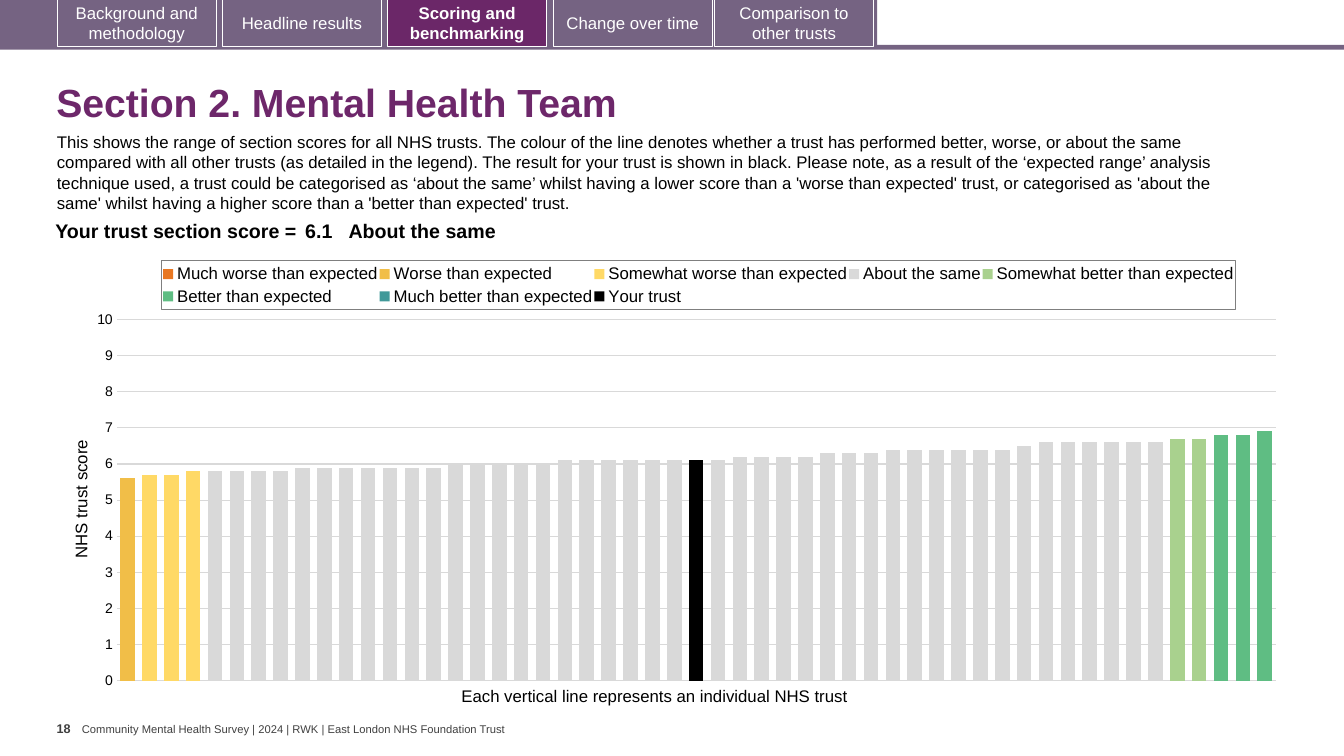
import copy

import pptx
import pptx.chart.data
import pptx.dml.color
import pptx.enum.chart
import pptx.enum.shapes
import pptx.enum.text
import pptx.oxml
import pptx.oxml.ns
import pptx.util

Pt = pptx.util.Pt
RGB = pptx.dml.color.RGBColor
qn = pptx.oxml.ns.qn
ALIGN = pptx.enum.text.PP_ALIGN
ANCHOR = pptx.enum.text.MSO_ANCHOR
RECT = pptx.enum.shapes.MSO_SHAPE.RECTANGLE

WHITE = RGB(0xFF, 0xFF, 0xFF)
BLACK = RGB(0, 0, 0)
MAUVE = RGB(0x75, 0x63, 0x82)
PLUM = RGB(0x6B, 0x27, 0x68)
PURPLE = RGB(0x6D, 0x27, 0x6A)
SLATE = RGB(0x40, 0x40, 0x40)
GRID = RGB(0xD9, 0xD9, 0xD9)

TABS = [
    (41, "Background and methodology"),
    (159, "Headline results"),
    (277, "Scoring and benchmarking"),
    (395.25, "Change over time"),
    (510.5, "Comparison to other trusts"),
]
ACTIVE = "Scoring and benchmarking"

INTRO = (
    "This shows the range of section scores for all NHS trusts. The colour of the line "
    "denotes whether a trust has performed better, worse, or about the same compared with "
    "all other trusts (as detailed in the legend). The result for your trust is shown in "
    "black. Please note, as a result of the ‘expected range’ analysis technique used, a "
    "trust could be categorised as ‘about the same’ whilst having a lower score than a "
    "'worse than expected' trust, or categorised as 'about the same' whilst having a "
    "higher score than a 'better than expected' trust."
)

TRUSTS = 53
SAME = ([5.8] * 4 + [5.9] * 7 + [6.0] * 5 + [6.1] * 8 + [6.2] * 4
        + [6.3] * 3 + [6.4] * 6 + [6.5] + [6.6] * 6)
# Band name, colour, position of its first trust, scores
BANDS = [
    ("Much worse than expected", RGB(0xE8, 0x77, 0x22), 0, []),
    ("Worse than expected", RGB(0xF1, 0xBE, 0x48), 0, [5.6]),
    ("Somewhat worse than expected", RGB(0xFF, 0xD9, 0x66), 1, [5.7, 5.7, 5.8]),
    ("About the same", GRID, 4, SAME),
    ("Somewhat better than expected", RGB(0xA9, 0xD1, 0x8E), 48, [6.7, 6.7]),
    ("Better than expected", RGB(0x5F, 0xBD, 0x83), 50, [6.8, 6.8, 6.9]),
    ("Much better than expected", RGB(0x41, 0x99, 0x99), 0, []),
    ("Your trust", BLACK, 26, [6.1]),
]


def style(font, size, color=BLACK, bold=False):
    font.name = "Arial"
    font.size = Pt(size)
    font.bold = bold
    font.color.rgb = color


def add_text(slide, box, text, size, color=BLACK, bold=False, wrap=False, side=7.2):
    frame = slide.shapes.add_textbox(*map(Pt, box)).text_frame
    frame.word_wrap = wrap
    frame.margin_left = frame.margin_right = Pt(side)
    frame.text = text
    style(frame.paragraphs[0].font, size, color, bold)


def add_block(slide, box, fill):
    block = slide.shapes.add_shape(RECT, *map(Pt, box))
    block.shadow.inherit = False
    block.fill.solid()
    block.fill.fore_color.rgb = fill
    block.line.fill.background()
    return block


def add_tabs(slide, box):
    left, top, width, height = box
    add_block(slide, (left, top + height - 3.5, width, 3.5), MAUVE)
    add_block(slide, (left, top, 626.5, height - 1.5), MAUVE)
    for start, label in TABS:
        active = label == ACTIVE
        tab = add_block(slide, (left + start, top - 0.75, 113.5, 34), PLUM if active else MAUVE)
        tab.line.color.rgb = WHITE
        tab.line.width = Pt(0.75)
        frame = tab.text_frame
        frame.word_wrap = True
        frame.vertical_anchor = ANCHOR.MIDDLE
        frame.text = label
        frame.paragraphs[0].alignment = ALIGN.CENTER
        style(frame.paragraphs[0].font, 12, WHITE, active)


def add_title(slide, box):
    title = slide.shapes.title
    title.left, title.top, title.width, title.height = map(Pt, box)
    frame = title.text_frame
    frame.text = "Section 2. Mental Health Team"
    frame.auto_size = pptx.enum.text.MSO_AUTO_SIZE.NONE
    frame.vertical_anchor = ANCHOR.MIDDLE
    line = frame.paragraphs[0]
    line.alignment = ALIGN.LEFT
    line.line_spacing = 0.9
    style(line.font, 28, PURPLE, True)


def add_score(slide, box):
    table = slide.shapes.add_table(1, 3, *map(Pt, box)).table
    table.first_row = table.horz_banding = False
    cells = [
        (189.5, "Your trust section score =", ALIGN.RIGHT, 3),
        (34, "6.1", ALIGN.LEFT, 3),
        (box[2] - 223.5, "About the same", ALIGN.LEFT, 0),
    ]
    for index, (width, text, align, side) in enumerate(cells):
        table.columns[index].width = Pt(width)
        cell = table.cell(0, index)
        cell.fill.background()
        cell.margin_left = cell.margin_right = Pt(side)
        cell.margin_top = cell.margin_bottom = Pt(3)
        cell.text = text
        line = cell.text_frame.paragraphs[0]
        line.alignment = align
        style(line.font, 14, bold=True)


def parse_xml(body):
    return pptx.oxml.parse_xml(body.replace(">", " " + pptx.oxml.ns.nsdecls("c", "a") + ">", 1))


def set_place(part, box, inner=False, **place):
    """Give a chart part a fixed place, in points within the chart's box."""
    for old in part.findall(qn("c:layout")):
        part.remove(old)
    body = '<c:layoutTarget val="inner"/>' if inner else ""
    body += "".join(f'<c:{key}Mode val="edge"/>' for key in place if key in "xy")
    for key, value in place.items():
        body += f'<c:{key} val="{value / box[2 if key in "xw" else 3]:.4f}"/>'
    layout = parse_xml(f"<c:layout><c:manualLayout>{body}</c:manualLayout></c:layout>")
    after = part.find(qn("c:overlay"))
    (part[0] if after is None else after).addprevious(layout)


def add_legend(chart, box):
    chart.has_legend = True
    legend = chart.legend
    legend.position = pptx.enum.chart.XL_LEGEND_POSITION.TOP
    legend.include_in_layout = False
    style(legend.font, 12)
    part = legend._element
    set_place(part, box, x=67, y=8.5, w=767.5, h=35)
    part.find(qn("c:overlay")).addnext(parse_xml(
        '<c:spPr><a:ln w="9525"><a:solidFill><a:srgbClr val="7F7F7F"/>'
        "</a:solidFill></a:ln></c:spPr>"))


def split_axis(area):
    """Move the last series to a second plot on an unlabelled right axis."""
    first = area.find(qn("c:barChart"))
    second = copy.deepcopy(first)
    first.remove(first.findall(qn("c:ser"))[-1])
    for series in second.findall(qn("c:ser"))[:-1]:
        second.remove(series)
    for link, number in zip(second.findall(qn("c:axId")), ("501", "502")):
        link.set("val", number)
    first.addnext(second)
    common = '<c:crossAx val="{}"/><c:crosses val="{}"/>'
    scale = '<c:scaling><c:orientation val="minMax"/>{}</c:scaling><c:delete val="{}"/>'
    right = (
        '<c:valAx><c:axId val="502"/>'
        + scale.format('<c:max val="10"/><c:min val="0"/>', 0)
        + '<c:axPos val="r"/><c:majorTickMark val="out"/><c:minorTickMark val="none"/>'
        '<c:tickLblPos val="none"/><c:spPr><a:ln><a:noFill/></a:ln></c:spPr>'
        + common.format(501, "max") + "</c:valAx>")
    base = ('<c:catAx><c:axId val="501"/>' + scale.format("", 1) + '<c:axPos val="b"/>'
            + common.format(502, "autoZero") + "</c:catAx>")
    last = area.find(qn("c:valAx"))
    last.addnext(parse_xml(base))
    last.addnext(parse_xml(right))


def add_chart(slide, box):
    data = pptx.chart.data.CategoryChartData()
    data.categories = [str(number) for number in range(1, TRUSTS + 1)]
    for name, _, start, scores in BANDS:
        rest = TRUSTS - start - len(scores)
        data.add_series(name, [None] * start + scores + [None] * rest)
    kind = pptx.enum.chart.XL_CHART_TYPE.COLUMN_CLUSTERED
    chart = slide.shapes.add_chart(kind, *map(Pt, box), data).chart
    chart.has_title = False
    style(chart.font, 10)
    plot = chart.plots[0]
    plot.gap_width = 50
    plot.overlap = 100
    plot.vary_by_categories = False
    for series, band in zip(plot.series, BANDS):
        series.format.fill.solid()
        series.format.fill.fore_color.rgb = band[1]
    chart.category_axis.visible = False
    axis = chart.value_axis
    axis.minimum_scale, axis.maximum_scale, axis.major_unit = 0, 10, 1
    axis.major_tick_mark = pptx.enum.chart.XL_TICK_MARK.NONE
    axis.format.line.fill.background()
    axis.major_gridlines.format.line.color.rgb = GRID
    axis.major_gridlines.format.line.width = Pt(0.75)
    style(axis.tick_labels.font, 10)
    label = axis.axis_title
    label.text_frame.text = "NHS trust score"
    style(label.text_frame.paragraphs[0].font, 12)
    set_place(label._element, box, x=0, y=134.25)
    add_legend(chart, box)
    area = chart._chartSpace.chart.plotArea
    set_place(area, box, inner=True, x=35, y=50.5, w=828, h=258)
    split_axis(area)


def add_foot(slide, box):
    left, top, width, height = box
    add_text(slide, (left, top, 18, height), "18", 9, SLATE, True, side=0)
    add_text(slide, (left + 18, top + 0.75, width - 18, height),
             "Community Mental Health Survey | 2024 | RWK | East London NHS Foundation Trust",
             8, SLATE, side=0)


def main():
    deck = pptx.Presentation()
    deck.slide_width, deck.slide_height = Pt(960), Pt(540)
    slide = deck.slides.add_slide(deck.slide_layouts[5])
    add_tabs(slide, (0, 0, 960, 35.5))
    add_title(slide, (33, 49, 899, 52))
    add_text(slide, (33.5, 90.75, 873.5, 65.5), INTRO, 12, wrap=True)
    add_text(slide, (322.5, 486, 296, 21.5),
             "Each vertical line represents an individual NHS trust", 12)
    add_chart(slide, (48.25, 177.75, 875, 319.5))
    add_score(slide, (25.5, 155, 842, 22.5))
    add_foot(slide, (40.5, 511.5, 324.5, 20))
    deck.save("out.pptx")


if __name__ == "__main__":
    main()
